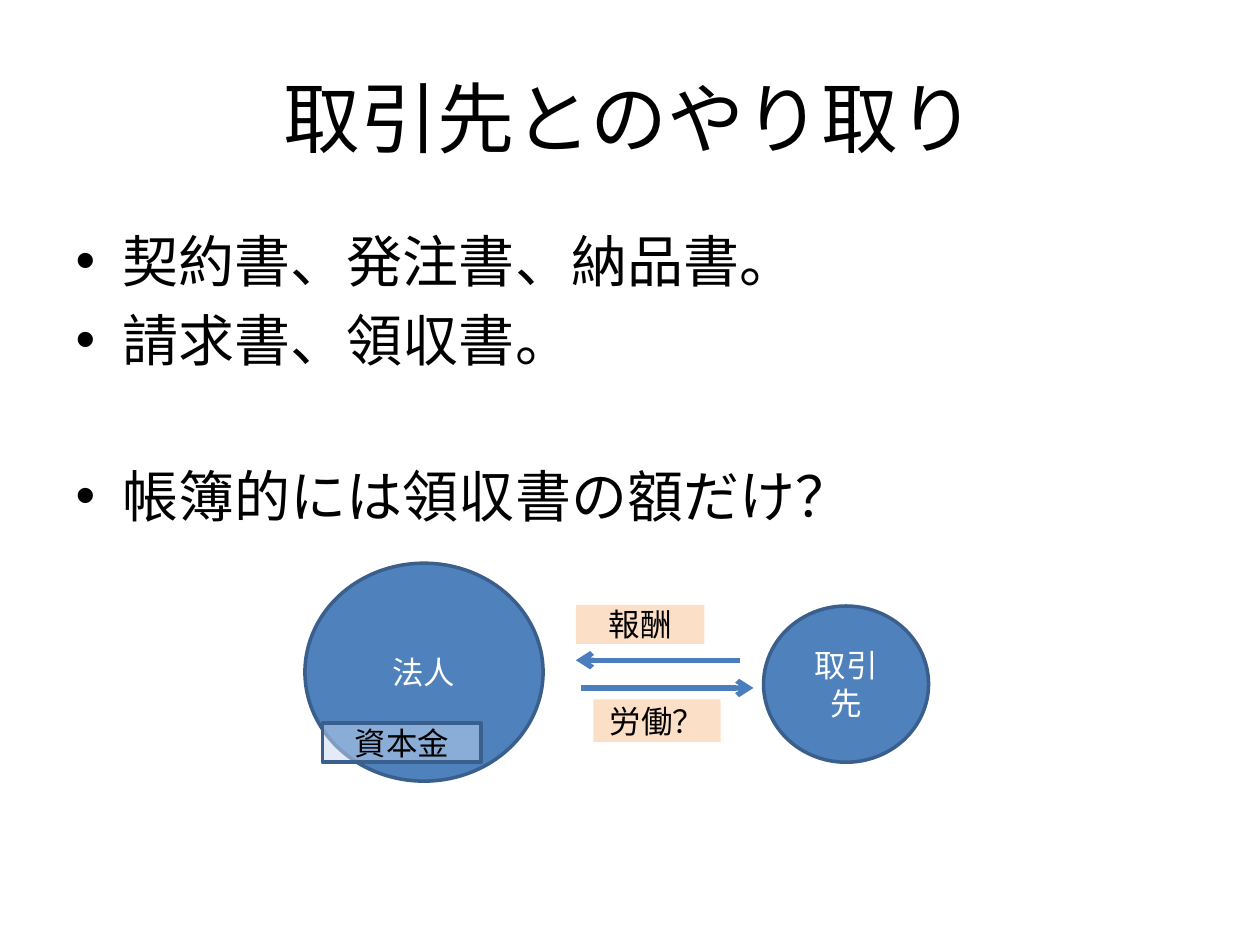
from pptx import Presentation
from pptx import util as u
from pptx.dml.color import RGBColor
from pptx.enum import shapes, text
from pptx.oxml.ns import qn
from lxml import etree

BLUE, OUTLINE, ARROW = "4F81BD", "3A5F8C", "4B7EBC"
ORANGE, PALE_BLUE = "FAC090", "C6D9F1"
BLACK, WHITE = "000000", "FFFFFF"
OVAL = shapes.MSO_SHAPE.OVAL
RECTANGLE = shapes.MSO_SHAPE.RECTANGLE


def color(value):
    return RGBColor.from_string(value)


def add_run(paragraph, words, size, font_color=BLACK):
    run = paragraph.add_run()
    run.text = words
    run.font.name = "Calibri"
    run.font.size = u.Pt(size)
    run.font.color.rgb = color(font_color)


def place(shape, box):
    shape.left, shape.top, shape.width, shape.height = map(u.Inches, box)


def add_title(slide, box):
    title = slide.shapes.title
    place(title, box)
    title.text_frame.vertical_anchor = text.MSO_ANCHOR.MIDDLE
    paragraph = title.text_frame.paragraphs[0]
    paragraph.alignment = text.PP_ALIGN.CENTER
    add_run(paragraph, "取引先とのやり取り", 44)


def add_bullets(slide, box):
    body = slide.placeholders[1]
    place(body, box)
    frame = body.text_frame
    lines = ["契約書、発注書、納品書。", "請求書、領収書。", "帳簿的には領収書の額だけ？"]
    for index, line in enumerate(lines):
        paragraph = frame.paragraphs[0] if index == 0 else frame.add_paragraph()
        add_run(paragraph, line, 32)
    # One line of air before the closing question
    paragraph.space_before = u.Pt(51)


def add_label(slide, kind, box, words, fill, font_color, alpha=None, outlined=True, wrap=True):
    shape = slide.shapes.add_shape(kind, *map(u.Inches, box))
    shape.shadow.inherit = False
    shape.fill.solid()
    shape.fill.fore_color.rgb = color(fill)
    if alpha is not None:
        fill_color = shape._element.spPr.find(qn("a:solidFill"))[0]
        etree.SubElement(fill_color, qn("a:alpha"), val=str(alpha * 1000))
    if outlined:
        shape.line.color.rgb = color(OUTLINE)
        shape.line.width = u.Pt(2)
    else:
        shape.line.fill.background()
    frame = shape.text_frame
    frame.word_wrap = wrap
    frame.vertical_anchor = text.MSO_ANCHOR.MIDDLE
    paragraph = frame.paragraphs[0]
    paragraph.alignment = text.PP_ALIGN.CENTER
    add_run(paragraph, words, 18, font_color)


def add_arrow(slide, start_x, end_x, y):
    arrow = slide.shapes.add_connector(
        shapes.MSO_CONNECTOR.STRAIGHT, *map(u.Inches, (start_x, y, end_x, y)))
    arrow.line.color.rgb = color(ARROW)
    arrow.line.width = u.Pt(3)
    etree.SubElement(arrow.line._get_or_add_ln(), qn("a:tailEnd"), type="arrow")
    etree.SubElement(arrow._element.spPr, qn("a:effectLst"))


def add_exchange_diagram(slide, left, top):
    def at(x, y, width, height):
        return left + x, top + y, width, height

    # Client and company
    add_label(slide, OVAL, at(3.64, 0.34, 1.31, 1.24), "取引先", BLUE, WHITE)
    add_label(slide, OVAL, at(0, 0, 1.89, 1.73), "法人", BLUE, WHITE)

    # What passes between them
    for words, box in (("報酬", at(2.15, 0.33, 1.02, 0.31)),
                       ("労働？", at(2.29, 1.08, 1.01, 0.34))):
        add_label(slide, RECTANGLE, box, words, ORANGE, BLACK,
                  alpha=50, outlined=False, wrap=False)

    # Capital held by the company
    add_label(slide, RECTANGLE, at(0.14, 1.27, 1.26, 0.31), "資本金", PALE_BLUE, BLACK, alpha=50)

    # Payment in, labour out
    add_arrow(slide, left + 3.45, left + 2.15, top + 0.77)
    add_arrow(slide, left + 2.19, left + 3.56, top + 0.99)


def main():
    presentation = Presentation()
    presentation.slide_width = u.Inches(10)
    presentation.slide_height = u.Inches(7.5)
    slide = presentation.slides.add_slide(presentation.slide_layouts[1])
    add_title(slide, (0.5, 0.3, 9, 1.25))
    add_bullets(slide, (0.5, 1.75, 9, 4.95))
    add_exchange_diagram(slide, 2.42, 4.47)
    presentation.save("out.pptx")


if __name__ == "__main__":
    main()
